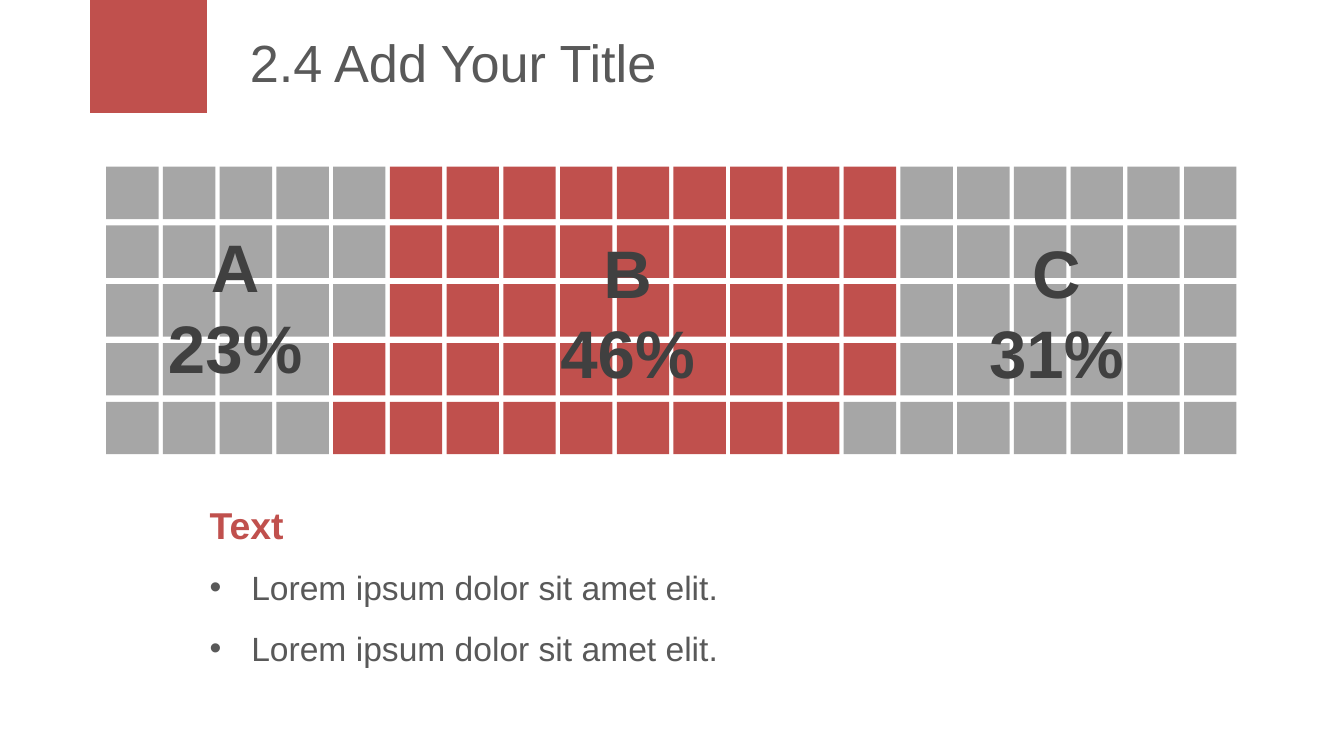
import dataclasses

import lxml.etree
import pptx
import pptx.dml.color
import pptx.enum.shapes
import pptx.enum.text
import pptx.oxml.ns
import pptx.util

Inches = pptx.util.Inches
Align = pptx.enum.text.PP_ALIGN


@dataclasses.dataclass(frozen=True)
class Theme:
    """Colours, font and type sizes of the slide."""
    accent: str = "C0504D"
    neutral: str = "A6A6A6"
    text: str = "595959"
    dark: str = "404040"
    font: str = "Arial"
    title_size: int = 28
    label_size: int = 36
    heading_size: int = 20
    list_size: int = 18


THEME = Theme()
SLIDE_WIDTH = 10
SLIDE_HEIGHT = SLIDE_WIDTH * 9 / 16
COLUMNS, ROWS, CELL = 20, 5, 0.39
SHARES = [
    ("A", 23, THEME.neutral, (0.03, 0.39)),
    ("B", 46, THEME.accent, (2.95, 0.43)),
    ("C", 31, THEME.neutral, (6.14, 0.43)),
]
ITEMS = ["Lorem ipsum dolor sit amet elit."] * 2


def place(shape, box):
    """Move and size a shape to a box given in inches."""
    shape.left, shape.top, shape.width, shape.height = map(Inches, box)


def add_rectangle(shapes, box, color):
    """Add a flat rectangle without outline."""
    rectangle = shapes.add_shape(
        pptx.enum.shapes.MSO_SHAPE.RECTANGLE, *map(Inches, box))
    rectangle.shadow.inherit = False
    rectangle.fill.solid()
    rectangle.fill.fore_color.rgb = pptx.dml.color.RGBColor.from_string(color)
    rectangle.line.fill.background()


def write_paragraph(frame, text, size, color, bold=False, align=Align.LEFT,
                    spacing=1.0, bullet=None, indent=0):
    """Append a formatted paragraph, reusing the frame's empty first one."""
    para = frame.paragraphs[0]
    if para.runs:
        para = frame.add_paragraph()
    para.alignment = align
    para.line_spacing = spacing
    para.space_before = pptx.util.Pt(0)
    span = para.add_run()
    span.text = text
    span.font.name = THEME.font
    span.font.size = pptx.util.Pt(size)
    span.font.bold = bold
    span.font.color.rgb = pptx.dml.color.RGBColor.from_string(color)
    properties = para._p.get_or_add_pPr()
    properties.set("marL", str(Inches(indent)))
    properties.set("indent", str(-Inches(indent)))
    mark = lxml.etree.SubElement(
        properties, pptx.oxml.ns.qn("a:buChar" if bullet else "a:buNone"))
    if bullet:
        mark.set("char", bullet)


def build_header(page, box):
    """Place the accent block and the title beside it."""
    left, top, width, height = box
    add_rectangle(page.shapes, (left, top, 0.87, height), THEME.accent)
    title = page.shapes.title
    place(title, (left + 1.09, top + 0.14, width - 1.09, 0.63))
    title.text_frame.auto_size = pptx.enum.text.MSO_AUTO_SIZE.NONE
    title.text_frame.vertical_anchor = pptx.enum.text.MSO_ANCHOR.MIDDLE
    write_paragraph(title.text_frame, "2.4 Add Your Title",
                    THEME.title_size, THEME.text)


def build_share_grid(page, box):
    """Fill a hundred cells column by column and label each share."""
    left, top, width, height = box
    step_x = (width - CELL) / (COLUMNS - 1)
    step_y = (height - CELL) / (ROWS - 1)
    colors = [color for _, share, color, _ in SHARES for _ in range(share)]
    cells = page.shapes.add_group_shape()
    for index, color in enumerate(colors):
        column, row = divmod(index, ROWS)
        add_rectangle(cells.shapes, (left + column * step_x,
                                     top + row * step_y, CELL, CELL), color)
    for name, share, _, (offset_x, offset_y) in SHARES:
        label = page.shapes.add_textbox(
            *map(Inches, (left + offset_x, top + offset_y, 1.86, 1.31)))
        label.text_frame.word_wrap = True
        for text in (name, f"{share}%"):
            write_paragraph(label.text_frame, text, THEME.label_size,
                            THEME.dark, bold=True, align=Align.CENTER)


def build_notes_list(page, box):
    """Place the heading and bulleted list in the body placeholder."""
    body = page.placeholders[1]
    place(body, box)
    frame = body.text_frame
    frame.auto_size = pptx.enum.text.MSO_AUTO_SIZE.NONE
    write_paragraph(frame, "Text", THEME.heading_size, THEME.accent,
                    bold=True, spacing=1.5)
    for item in ITEMS:
        write_paragraph(frame, item, THEME.list_size, THEME.text,
                        spacing=1.5, bullet="•", indent=0.31)


def main():
    """Build and save the deck."""
    deck = pptx.Presentation()
    deck.slide_width, deck.slide_height = map(
        Inches, (SLIDE_WIDTH, SLIDE_HEIGHT))
    page = deck.slides.add_slide(deck.slide_layouts[1])
    build_header(page, (0.67, 0, 8.98, 0.84))
    build_share_grid(page, (0.79, 1.24, 8.41, 2.14))
    build_notes_list(page, (1.46, 3.52, 6.85, 1.51))
    deck.save("out.pptx")


if __name__ == "__main__":
    main()
